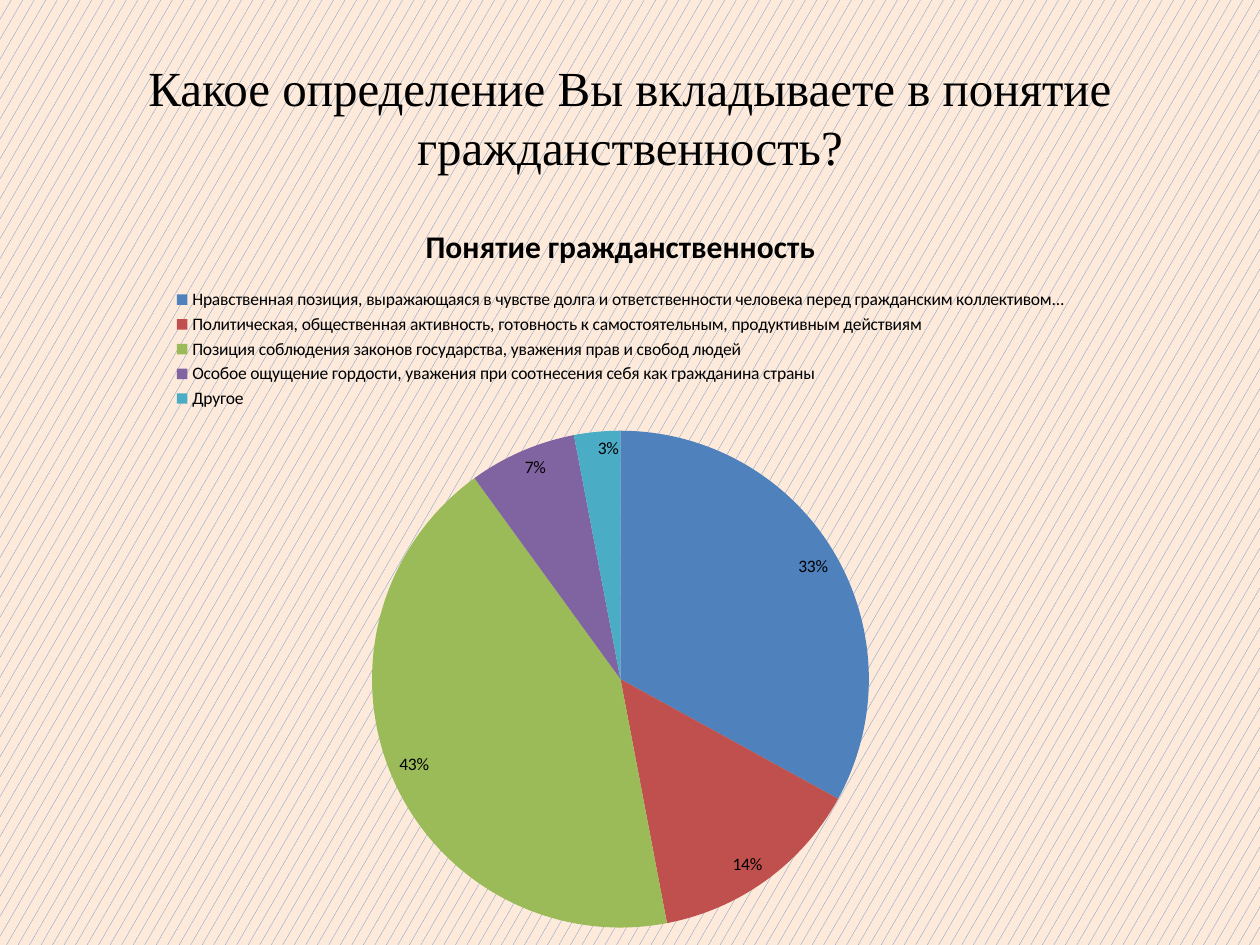
from pptx import Presentation
from pptx.chart.data import CategoryChartData
from pptx.dml.color import RGBColor
from pptx.enum.chart import XL_CHART_TYPE, XL_LABEL_POSITION, XL_LEGEND_POSITION
from pptx.enum.dml import MSO_PATTERN
from pptx.enum.text import MSO_ANCHOR, PP_ALIGN
from pptx.util import Emu, Pt

PX_PER_INCH = 126
BLACK = RGBColor(0x00, 0x00, 0x00)
PEACH = RGBColor(0xFD, 0xEA, 0xDA)
BLUE = RGBColor(0x4F, 0x81, 0xBD)
RED = RGBColor(0xC0, 0x50, 0x4D)
GREEN = RGBColor(0x9B, 0xBB, 0x59)
PURPLE = RGBColor(0x80, 0x64, 0xA2)
TEAL = RGBColor(0x4B, 0xAC, 0xC6)

QUESTION = "Какое определение Вы вкладываете в понятие гражданственность?"
CHART_TITLE = "Понятие гражданственность"
ANSWERS = [
    ("Нравственная позиция, выражающаяся в чувстве долга и ответственности "
     "человека перед гражданским коллективом...", 33, BLUE),
    ("Политическая, общественная активность, готовность к самостоятельным, "
     "продуктивным действиям", 14, RED),
    ("Позиция соблюдения законов государства, уважения прав и свобод людей", 43, GREEN),
    ("Особое ощущение гордости, уважения при соотнесения себя как гражданина страны",
     7, PURPLE),
    ("Другое", 3, TEAL),
]


def px(length):
    return Emu(round(length * 914400 / PX_PER_INCH))


def style_font(font, name, size, bold=False):
    font.name = name
    font.size = Pt(size)
    font.bold = bold
    font.color.rgb = BLACK


def fill_background(slide):
    fill = slide.background.fill
    fill.patterned()
    fill.pattern = MSO_PATTERN.SMALL_CONFETTI
    fill.fore_color.rgb = BLUE
    fill.back_color.rgb = PEACH


def add_question(slide, left, top, width, height):
    frame = slide.shapes.add_textbox(px(left), px(top), px(width), px(height)).text_frame
    frame.word_wrap = True
    frame.vertical_anchor = MSO_ANCHOR.MIDDLE
    frame.text = QUESTION
    paragraph = frame.paragraphs[0]
    paragraph.alignment = PP_ALIGN.CENTER
    style_font(paragraph.runs[0].font, "Times New Roman", 28)


def add_answers_pie(slide, left, top, width, height):
    answers = CategoryChartData()
    answers.categories = [answer for answer, _, _ in ANSWERS]
    answers.add_series("Series 1", [share for _, share, _ in ANSWERS])
    chart = slide.shapes.add_chart(
        XL_CHART_TYPE.PIE, px(left), px(top), px(width), px(height), answers).chart
    style_font(chart.font, "Calibri", 10)

    chart.has_title = True
    heading = chart.chart_title.text_frame
    heading.text = CHART_TITLE
    style_font(heading.paragraphs[0].runs[0].font, "Calibri", 18, bold=True)

    chart.has_legend = True
    chart.legend.position = XL_LEGEND_POSITION.TOP
    chart.legend.include_in_layout = False

    pie = chart.plots[0]
    pie.vary_by_categories = True
    for index, (_, _, colour) in enumerate(ANSWERS):
        slice_fill = pie.series[0].points[index].format.fill
        slice_fill.solid()
        slice_fill.fore_color.rgb = colour

    pie.has_data_labels = True
    labels = pie.data_labels
    labels.show_value = False
    labels.show_percentage = True
    labels.number_format = "0%"
    labels.number_format_is_linked = False
    labels.position = XL_LABEL_POSITION.INSIDE_END
    style_font(labels.font, "Calibri", 10)


def main():
    presentation = Presentation()
    presentation.slide_width = px(1260)
    presentation.slide_height = px(945)
    slide = presentation.slides.add_slide(presentation.slide_layouts[6])
    fill_background(slide)
    add_question(slide, 63, 38, 1134, 157)
    add_answers_pie(slide, 44, 197, 1153, 748)
    presentation.save("out.pptx")


if __name__ == "__main__":
    main()
